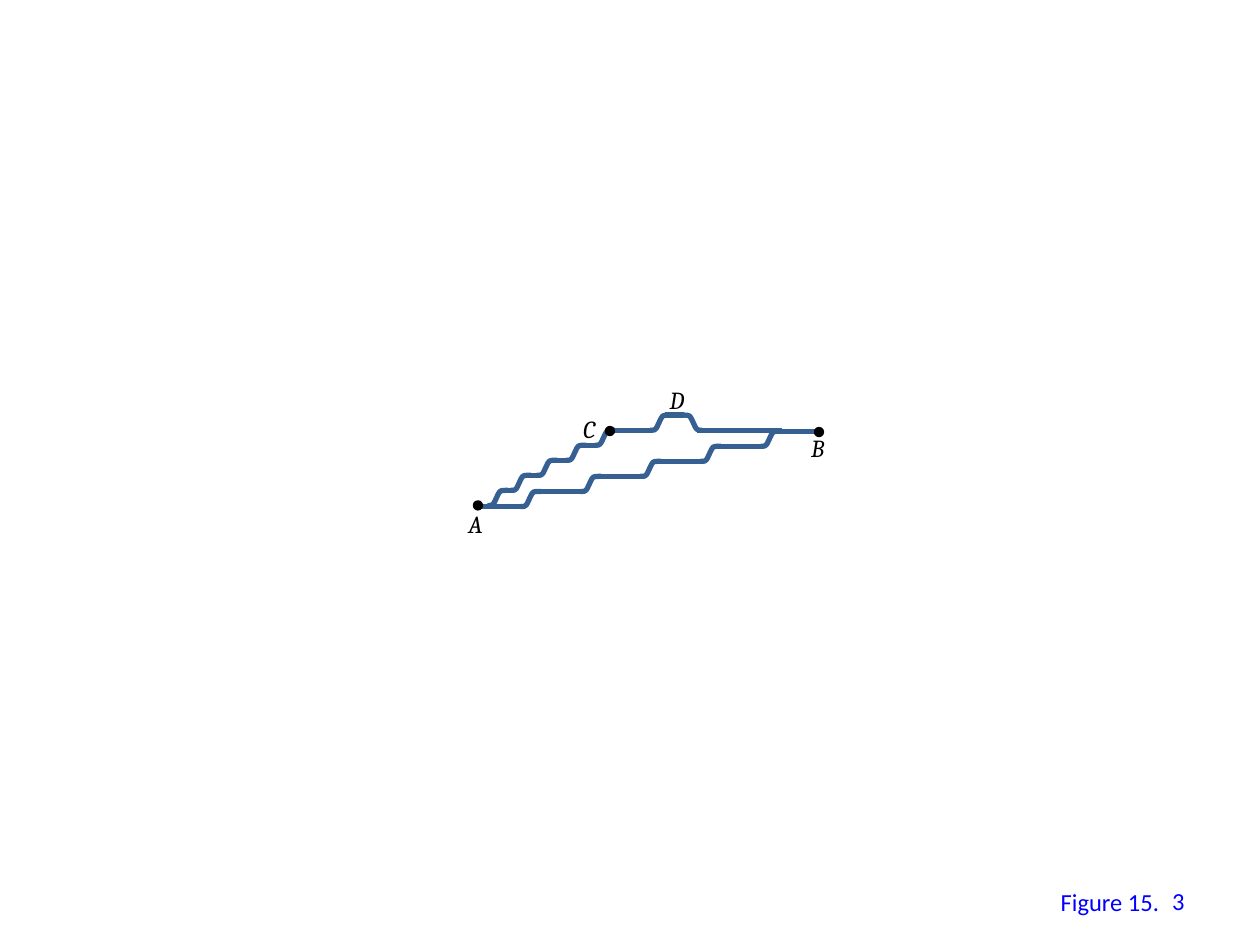
from pptx import Presentation
from pptx.dml.color import RGBColor
from pptx.enum.shapes import MSO_CONNECTOR, MSO_SHAPE
from pptx.enum.text import MSO_ANCHOR, MSO_AUTO_SIZE, PP_ALIGN
from pptx.oxml.ns import qn
from pptx.util import Pt
from lxml.etree import SubElement

BLUE, BLACK, CAPTION = "376092", "000000", "0000FF"

# Paths: start x, base y, (riser left x, direction: 1 up, -1 down), end x
PATHS = [
    (273, 289.4, [(297.4 + 34.3 * i, 1) for i in range(5)], 468.7),
    (278.6, 288.8, [(278.6, 1), (291.6, 1), (306.7, 1), (323.3, 1),
                    (339.8, 1), (371.5, 1), (389.5, -1)], 447),
]
# S-curve of one riser: x, height
RISER = [(0, 0), (1.5, 0), (2.3, 0.1), (2.8, 0.4), (3.4, 0.9), (4, 1.9),
         (4.8, 3.6), (5.6, 5.3), (6.3, 6.8), (7.1, 7.9), (7.8, 8.3),
         (8.6, 8.5), (10.2, 8.6), (11.8, 8.6)]
RISER_WIDTH, RISER_HEIGHT = RISER[-1]
OVERLAP = 1.6

DOTS = [(273.1, 288.8), (468, 246.9), (348.5, 246.3)]
DOT_SIZE = 4.4
# Text, left, top, width
POINT_LABELS = [("A", 260.6, 287.5, 26.6), ("D", 375.6, 216.6, 28.8),
                ("C", 326.2, 232.8, 28), ("B", 456.5, 243.9, 26.6)]


def color(hex_code):
    return RGBColor.from_string(hex_code)


def style_line(line, hex_code, width):
    line.color.rgb = color(hex_code)
    line.width = Pt(width)


def add_flat(slide, left, right, y):
    connector = slide.shapes.add_connector(
        MSO_CONNECTOR.STRAIGHT, Pt(left), Pt(y), Pt(right), Pt(y))
    style_line(connector.line, BLUE, 3)
    SubElement(connector._element.spPr, qn("a:effectLst"))


def add_riser(slide, left, y, direction):
    """Draw an S-curve whose lower end is at y; a falling one is mirrored."""
    points = [(Pt(left + (x if direction > 0 else RISER_WIDTH - x)), Pt(y - height))
              for x, height in RISER]
    builder = slide.shapes.build_freeform(*points[0])
    builder.add_line_segments(points[1:], close=False)
    shape = builder.convert_to_shape()
    shape.fill.background()
    shape.shadow.inherit = False
    style_line(shape.line, BLUE, 3)


def add_path(slide, start, y, risers, end):
    for left, direction in risers:
        add_flat(slide, start, left + OVERLAP, y)
        low = y if direction > 0 else y + RISER_HEIGHT
        add_riser(slide, left, low, direction)
        y -= direction * RISER_HEIGHT
        start = left + RISER_WIDTH - OVERLAP * 2
    add_flat(slide, start, end, y)


def add_dot(slide, center_x, center_y):
    dot = slide.shapes.add_shape(
        MSO_SHAPE.OVAL, Pt(center_x - DOT_SIZE / 2), Pt(center_y - DOT_SIZE / 2),
        Pt(DOT_SIZE), Pt(DOT_SIZE))
    dot.shadow.inherit = False
    dot.fill.solid()
    dot.fill.fore_color.rgb = color(BLACK)
    style_line(dot.line, BLACK, 1.5)


def add_label(slide, text, left, top, width, font_name, hex_code, height=24.2):
    box = slide.shapes.add_textbox(Pt(left), Pt(top), Pt(width), Pt(height))
    frame = box.text_frame
    frame.word_wrap = False
    frame.auto_size = MSO_AUTO_SIZE.SHAPE_TO_FIT_TEXT
    paragraph = frame.paragraphs[0]
    paragraph.text = text
    paragraph.font.name = font_name
    paragraph.font.size = Pt(14)
    paragraph.font.color.rgb = color(hex_code)
    return frame


def main():
    presentation = Presentation()
    presentation.slide_width, presentation.slide_height = Pt(720), Pt(540)
    slide = presentation.slides.add_slide(presentation.slide_layouts[6])

    add_label(slide, "Figure 15.", 599, 503.3, 71.3, "Calibri", CAPTION)
    for path in PATHS:
        add_path(slide, *path)
    for dot in DOTS:
        add_dot(slide, *dot)
    for label in POINT_LABELS:
        frame = add_label(slide, *label, "Cambria", BLACK)
        frame.paragraphs[0].font.italic = True

    number = add_label(slide, "3", 516, 500.5, 168, "Calibri", CAPTION, 28.8)
    number.word_wrap = True
    number.auto_size = MSO_AUTO_SIZE.NONE
    number.vertical_anchor = MSO_ANCHOR.MIDDLE
    number.paragraphs[0].alignment = PP_ALIGN.RIGHT

    presentation.save("out.pptx")


if __name__ == "__main__":
    main()
